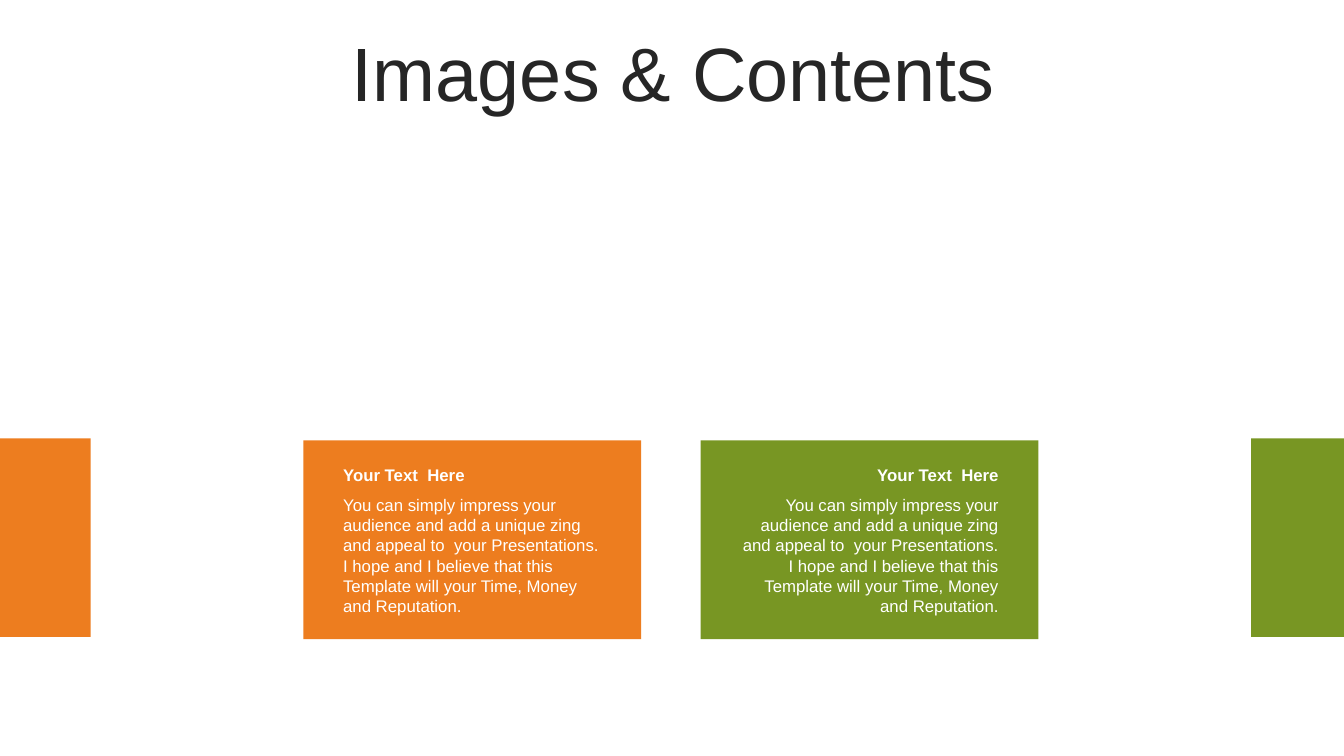
from pptx import Presentation
from pptx import util as u
from pptx.dml.color import RGBColor
from pptx.enum import shapes, text

FONT = "Arial"
ORANGE, GREEN, WHITE, DARK = "ED7D1F", "789623", "FFFFFF", "262626"
W, H = 13.33, 7.5
CARD_W, CARD_H, CARD_TOP = 3.35, 1.97, 4.37
BAND_TOP = 4.35
HEADING = "Your Text  Here"
BODY = ("You can simply impress your audience and add a unique zing and appeal to  your "
        "Presentations. I hope and I believe that this Template will your Time, Money and "
        "Reputation.")


def rgb(value):
    """Turn a hex string into a colour."""
    return RGBColor.from_string(value)


def style(p, size, color, align, bold=False):
    """Format one paragraph."""
    p.alignment = align
    p.font.name = FONT
    p.font.size = u.Pt(size)
    p.font.bold = bold
    p.font.color.rgb = rgb(color)


def add_title(s, box, title):
    """Fill the title placeholder and move it to the box."""
    sp = s.shapes.title
    sp.left, sp.top, sp.width, sp.height = map(u.Inches, box)
    tf = sp.text_frame
    tf.text = title
    tf.word_wrap = True
    tf.auto_size = text.MSO_AUTO_SIZE.NONE
    tf.vertical_anchor = text.MSO_ANCHOR.MIDDLE
    p = tf.paragraphs[0]
    p.line_spacing = 0.9
    style(p, 54, DARK, text.PP_ALIGN.CENTER)


def add_block(s, box, color):
    """Draw a plain filled rectangle."""
    sp = s.shapes.add_shape(shapes.MSO_SHAPE.RECTANGLE, *map(u.Inches, box))
    sp.shadow.inherit = False
    sp.fill.solid()
    sp.fill.fore_color.rgb = rgb(color)
    sp.line.fill.background()


def add_text(s, box, content, align, bold=False):
    """Add a wrapping white text box."""
    tf = s.shapes.add_textbox(*map(u.Inches, box)).text_frame
    tf.word_wrap = True
    tf.text = content
    style(tf.paragraphs[0], 12, WHITE, align, bold)


def add_card(s, box, color, align):
    """Draw a coloured card with its heading and body."""
    left, top, width, height = box
    inset = 0.295
    inner_w = width - 2 * inset
    add_block(s, box, color)
    add_text(s, (left + inset, top + 0.19, inner_w, 0.3), HEADING, align, True)
    add_text(s, (left + inset, top + 0.49, inner_w, 1.31), BODY, align)


def main():
    """Build the slide and save it."""
    prs = Presentation()
    prs.slide_width, prs.slide_height = u.Inches(W), u.Inches(H)
    s = prs.slides.add_slide(prs.slide_layouts[5])
    add_title(s, (0.35, 0.37, 12.66, 0.79), "Images & Contents")
    cards = ((3.01, ORANGE, text.PP_ALIGN.LEFT), (6.95, GREEN, text.PP_ALIGN.RIGHT))
    for left, color, align in cards:
        add_card(s, (left, CARD_TOP, CARD_W, CARD_H), color, align)
    for left, width, color in ((0, 0.9, ORANGE), (W - 0.92, 0.92, GREEN)):
        add_block(s, (left, BAND_TOP, width, CARD_H), color)
    prs.save("out.pptx")


if __name__ == "__main__":
    main()
